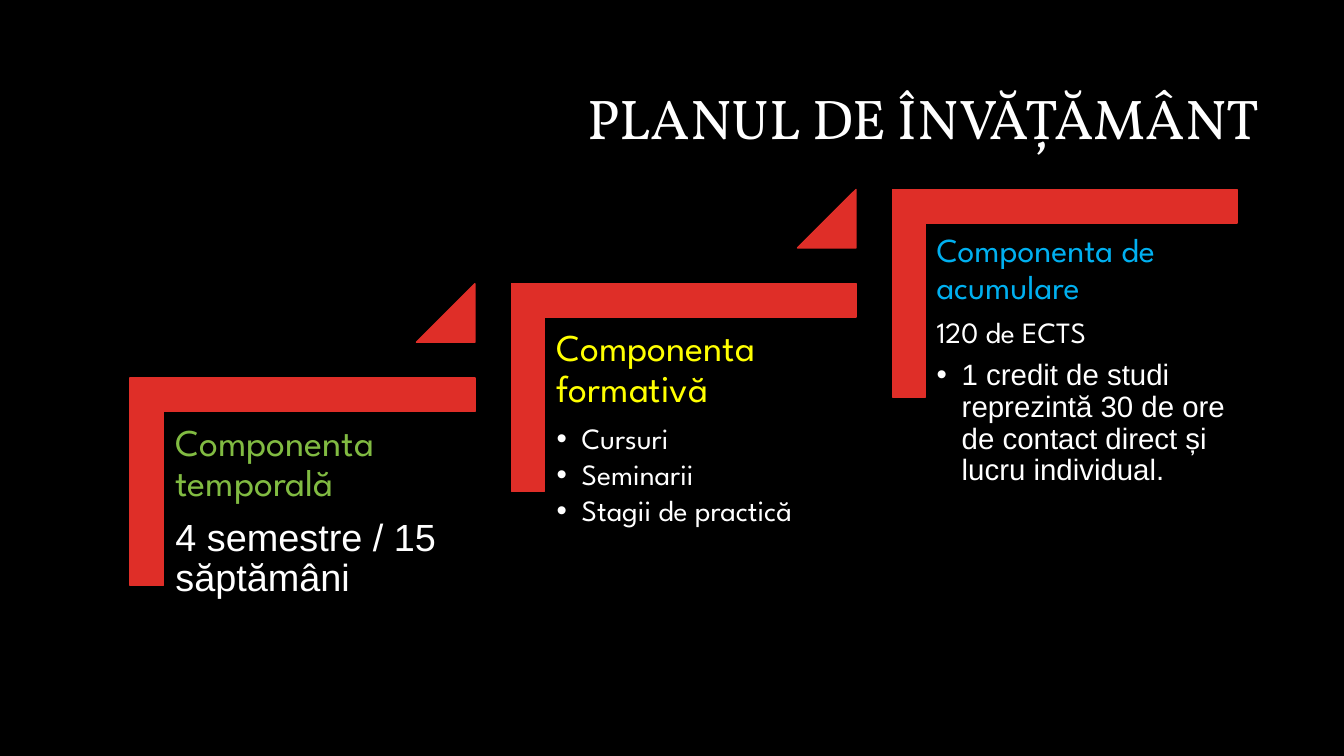
from dataclasses import dataclass

from lxml.etree import SubElement
from pptx import Presentation
from pptx.dml.color import RGBColor
from pptx.enum.shapes import MSO_SHAPE as SHAPE
from pptx.enum.text import MSO_ANCHOR as ANCHOR, PP_ALIGN as ALIGN
from pptx.oxml.ns import qn
from pptx.util import Inches, Pt


@dataclass(frozen=True)
class Theme:
    back: str = "000000"
    text: str = "FFFFFF"
    accent: str = "DF2E28"
    green: str = "81BB42"
    yellow: str = "FFFF00"
    blue: str = "00B0F0"
    title_font: str = "Vollkorn"
    body_font: str = "League Spartan"
    plain_font: str = "Arial"
    title_size: int = 40
    large: int = 27
    medium: int = 24
    small: int = 21


T = Theme()
WIDTH, HEIGHT = 13.33, 7.5
TITLE_BOX = (3.17, 0.53, 9.42, 1.35)

# Staircase grid: first step's corner, offset between steps, step size
START_X, START_Y = 1.29, 3.75
RUN, RISE = 3.78, 0.935
STEP_W, STEP_H = 3.42, 2.06
BAR = 0.161
TEXT_GAP, TEXT_W, TEXT_H = 0.34, 3.09, 2.71
ARROW = 0.58

# Each line: text, size, font, colour, bulleted
STEPS = [
    (0.11, [("Componenta temporală", T.large, T.body_font, T.green, False),
            ("4 semestre / 15 săptămâni", T.large, T.plain_font, T.text, False)]),
    (0.11, [("Componenta formativă", T.large, T.body_font, T.yellow, False),
            ("Cursuri", T.small, T.body_font, T.text, True),
            ("Seminarii", T.small, T.body_font, T.text, True),
            ("Stagii de practică", T.small, T.body_font, T.text, True)]),
    (0.1, [("Componenta de acumulare", T.medium, T.body_font, T.blue, False),
           ("120 de ECTS", T.small, T.body_font, T.text, False),
           ("1 credit de studi reprezintă 30 de ore de contact direct și lucru individual.",
            T.small, T.plain_font, T.text, True)]),
]


def add_bullet(p):
    pPr = p._p.get_or_add_pPr()
    pPr.set("marL", str(Inches(0.25)))
    pPr.set("indent", str(-Inches(0.25)))
    SubElement(pPr, qn("a:buFont"), typeface=T.plain_font)
    SubElement(pPr, qn("a:buChar"), char="•")


def add_text(slide, box, lines, inset, anchor=ANCHOR.TOP, align=ALIGN.LEFT):
    tf = slide.shapes.add_textbox(*map(Inches, box)).text_frame
    tf.word_wrap = True
    tf.vertical_anchor = anchor
    for side in ("left", "top", "right", "bottom"):
        setattr(tf, f"margin_{side}", Inches(inset))
    for i, (text, size, font, color, bulleted) in enumerate(lines):
        p = tf.add_paragraph() if i else tf.paragraphs[0]
        layout = {"alignment": align, "line_spacing": 0.9,
                  "space_after": Pt(size * (0.15 if bulleted else 0.35))}
        for name, value in layout.items():
            setattr(p, name, value)
        if bulleted:
            add_bullet(p)
        r = p.add_run()
        r.text = text
        for name, value in {"size": Pt(size), "name": font}.items():
            setattr(r.font, name, value)
        r.font.color.rgb = RGBColor.from_string(color)


def add_accent(slide, kind, box, adjustments):
    s = slide.shapes.add_shape(kind, *map(Inches, box))
    s.shadow.inherit = False
    s.fill.solid()
    s.fill.fore_color.rgb = s.line.color.rgb = RGBColor.from_string(T.accent)
    s.line.width = Pt(1)
    for i, value in enumerate(adjustments):
        s.adjustments[i] = value
    return s


def add_step(slide, x, y, inset, lines, has_next):
    """Draw a bracket with its text and, before a next step, a triangle."""
    turn = (STEP_W - STEP_H) / 2  # the bracket is a corner turned a quarter
    corner = add_accent(slide, SHAPE.CORNER,
                        (x + turn, y - turn, STEP_H, STEP_W), (BAR, BAR))
    corner.rotation = 90
    add_text(slide, (x + TEXT_GAP, y + TEXT_GAP, TEXT_W, TEXT_H), lines, inset)
    if has_next:
        add_accent(slide, SHAPE.ISOSCELES_TRIANGLE,
                   (x + STEP_W - ARROW, y - RISE, ARROW, ARROW), (1,))


def add_staircase(slide, x, y):
    for i, (inset, lines) in enumerate(STEPS):
        add_step(slide, x + i * RUN, y - i * RISE, inset, lines, i < len(STEPS) - 1)


def main():
    prs = Presentation()
    prs.slide_width, prs.slide_height = Inches(WIDTH), Inches(HEIGHT)
    slide = prs.slides.add_slide(prs.slide_layouts[6])
    slide.background.fill.solid()
    slide.background.fill.fore_color.rgb = RGBColor.from_string(T.back)
    title = ("PLANUL DE ÎNVĂȚĂMÂNT", T.title_size, T.title_font, T.text, False)
    add_text(slide, TITLE_BOX, [title], 0.1, ANCHOR.MIDDLE, ALIGN.RIGHT)
    add_staircase(slide, START_X, START_Y)
    prs.save("out.pptx")


if __name__ == "__main__":
    main()
